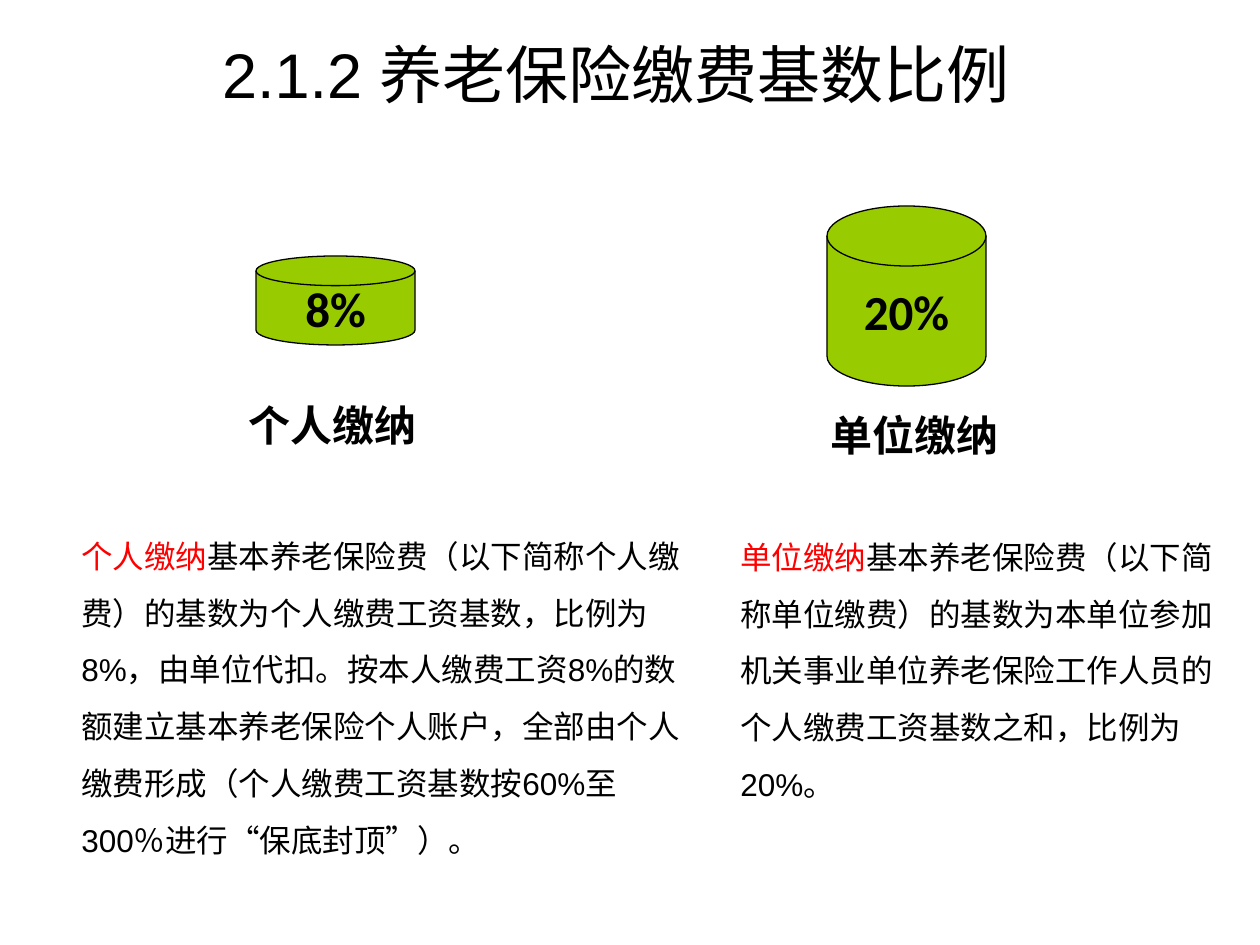
"""Build the slide on pension contribution bases and rates."""
from pptx import Presentation
from pptx.dml.color import RGBColor
from pptx.enum.shapes import MSO_SHAPE
from pptx.enum.text import MSO_ANCHOR, MSO_AUTO_SIZE, PP_ALIGN
from pptx.util import Pt

EMU_PER_PX = 914400 / 126
COLORS = {"text": "000000", "accent": "FF0000", "disk": "99CC00"}

TITLE = ("2.1.2 养老保险缴费基数比例", (168, 29, 896, 89))
PAYERS = [
    {
        "name": "个人缴纳",
        "rate": "8%",
        "rule": "基本养老保险费（以下简称个人缴费）的基数为个人缴费工资基数，比例为8%，"
                "由单位代扣。按本人缴费工资8%的数额建立基本养老保险个人账户，全部由个人"
                "缴费形成（个人缴费工资基数按60%至300％进行“保底封顶”）。",
        "disk_at": (256, 256, 159, 89),
        "label_at": (236, 393, 208, 63),
        "rule_at": (69, 512, 630, 350),
    },
    {
        "name": "单位缴纳",
        "rate": "20%",
        "rule": "基本养老保险费（以下简称单位缴费）的基数为本单位参加机关事业单位养老保险"
                "工作人员的个人缴费工资基数之和，比例为20%。",
        "disk_at": (827, 206, 159, 180),
        "label_at": (818, 403, 208, 64),
        "rule_at": (728, 513, 522, 299),
    },
]


def emu(box):
    return [round(length * EMU_PER_PX) for length in box]


def color(name):
    return RGBColor.from_string(COLORS[name])


def add_span(para, text, size, font="Arial", tint="text", bold=False):
    span = para.add_run()
    span.text = text
    span.font.size = Pt(size)
    span.font.name = font
    span.font.bold = bold
    span.font.color.rgb = color(tint)


def add_title(page, text, box):
    title = page.shapes.title
    title.left, title.top, title.width, title.height = emu(box)
    frame = title.text_frame
    frame.auto_size = MSO_AUTO_SIZE.NONE
    frame.vertical_anchor = MSO_ANCHOR.MIDDLE
    para = frame.paragraphs[0]
    para.alignment = PP_ALIGN.CENTER
    add_span(para, text, 36)


def add_disk(page, text, box):
    disk = page.shapes.add_shape(MSO_SHAPE.FLOWCHART_MAGNETIC_DISK, *emu(box))
    disk.shadow.inherit = False
    disk.fill.solid()
    disk.fill.fore_color.rgb = color("disk")
    disk.line.color.rgb = color("text")
    disk.line.width = Pt(0.75)
    frame = disk.text_frame
    frame.word_wrap = False
    frame.vertical_anchor = MSO_ANCHOR.MIDDLE
    para = frame.paragraphs[0]
    para.alignment = PP_ALIGN.CENTER
    add_span(para, text, 28, "Calibri", bold=True)


def add_text_para(page, box):
    frame = page.shapes.add_textbox(*emu(box)).text_frame
    frame.word_wrap = True
    return frame.paragraphs[0]


def main():
    deck = Presentation()
    deck.slide_width, deck.slide_height = emu((1260, 945))
    page = deck.slides.add_slide(deck.slide_layouts[5])
    add_title(page, *TITLE)
    for payer in PAYERS:
        add_disk(page, payer["rate"], payer["disk_at"])
        label = add_text_para(page, payer["label_at"])
        add_span(label, payer["name"], 24, "Calibri", bold=True)
        rule = add_text_para(page, payer["rule_at"])
        rule.line_spacing = 1.5
        add_span(rule, payer["name"], 18, tint="accent")
        add_span(rule, payer["rule"], 18)
    deck.save("out.pptx")


if __name__ == "__main__":
    main()
